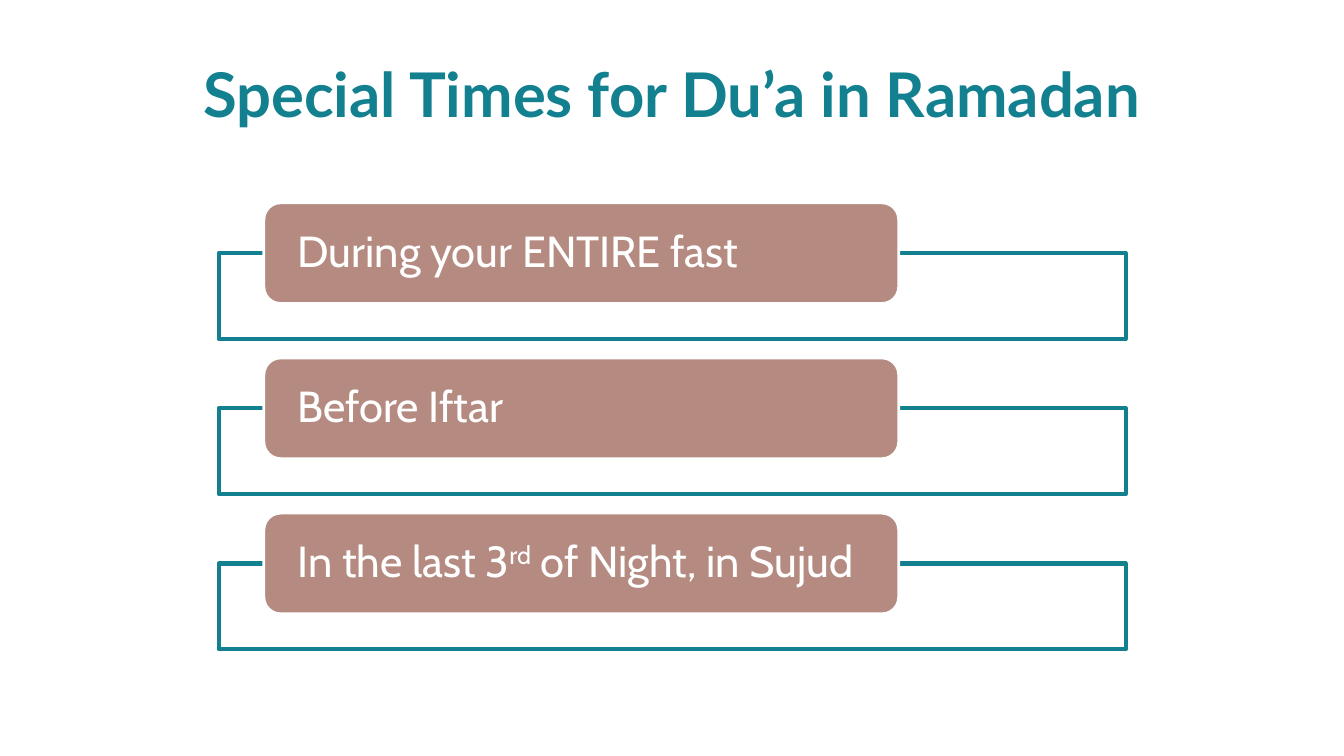
import pptx
import pptx.util
import pptx.dml.color
import pptx.enum.shapes
import pptx.enum.text
import pptx.oxml.ns
import lxml.etree

Cm, Pt = pptx.util.Cm, pptx.util.Pt
Kind = pptx.enum.shapes.MSO_SHAPE
Align = pptx.enum.text.PP_ALIGN
Mid = pptx.enum.text.MSO_ANCHOR.MIDDLE

HUES = {"teal": "138090", "rose": "B58B81", "white": "FFFFFF"}


class Deck:
    """Style and current slide."""

    def __init__(self, slide):
        self.slide = slide

    def hue(self, name):
        return pptx.dml.color.RGBColor.from_string(HUES[name])

    def add_text(self, para, text, face, size, hue, bold=False, base=0):
        run = para.add_run()
        run.text = text
        font = run.font
        font.name, font.size, font.bold = face, Pt(size), bold
        font.color.rgb = self.hue(hue)
        if base:
            font._element.set("baseline", str(base * 1000))

    def title(self, text, box):
        shape = self.slide.shapes.title
        shape.left, shape.top, shape.width, shape.height = map(Cm, box)
        frame = shape.text_frame
        frame.vertical_anchor = Mid
        para = frame.paragraphs[0]
        para.alignment = Align.CENTER
        self.add_text(para, text, "Lato", 44, "teal", bold=True)

    def block(self, kind, box, fill, line, width):
        shape = self.slide.shapes.add_shape(kind, *map(Cm, box))
        shape.shadow.inherit = False
        shape.fill.solid()
        shape.fill.fore_color.rgb = self.hue(fill)
        shape.line.color.rgb = self.hue(line)
        shape.line.width = Pt(width)
        return shape

    def frame(self, box):
        shape = self.block(Kind.RECTANGLE, box, "white", "teal", 3)
        # Slightly clear fill
        tint = shape._element.spPr.find(
            "/".join(map(pptx.oxml.ns.qn, ("a:solidFill", "a:srgbClr"))))
        alpha = lxml.etree.SubElement(tint, pptx.oxml.ns.qn("a:alpha"))
        alpha.set("val", "90000")

    def label(self, box, runs):
        shape = self.block(Kind.ROUNDED_RECTANGLE, box, "rose", "white", 2)
        text = shape.text_frame
        text.word_wrap = True
        text.vertical_anchor = Mid
        text.margin_left = text.margin_right = Cm(0.73)
        text.margin_top = text.margin_bottom = 0
        para = text.paragraphs[0]
        para.alignment = Align.LEFT
        para.line_spacing = 0.9
        for words, base in runs:
            self.add_text(para, words, "Cabin", 31, "white", base=base)


def main():
    prs = pptx.Presentation()
    prs.slide_width, prs.slide_height = Cm(33.87), Cm(19.05)
    deck = Deck(prs.slides.add_slide(prs.slide_layouts[5]))

    # Heading
    deck.title("Special Times for Du’a in Ramadan", (1.7, 0.76, 30.48, 3.18))

    # Times: each label sits across the top edge of its frame
    times = [
        [("During your ENTIRE fast", 0)],
        [("Before Iftar", 0)],
        [("In the last 3", 0), ("rd", 30), (" of Night, in Sujud", 0)],
    ]
    top, step = 5.11, 3.91
    for row, runs in enumerate(times):
        y = top + row * step
        deck.frame((5.51, y + 1.27, 22.86, 2.16))
        deck.label((6.65, y, 16, 2.54), runs)

    prs.save("out.pptx")


if __name__ == "__main__":
    main()
